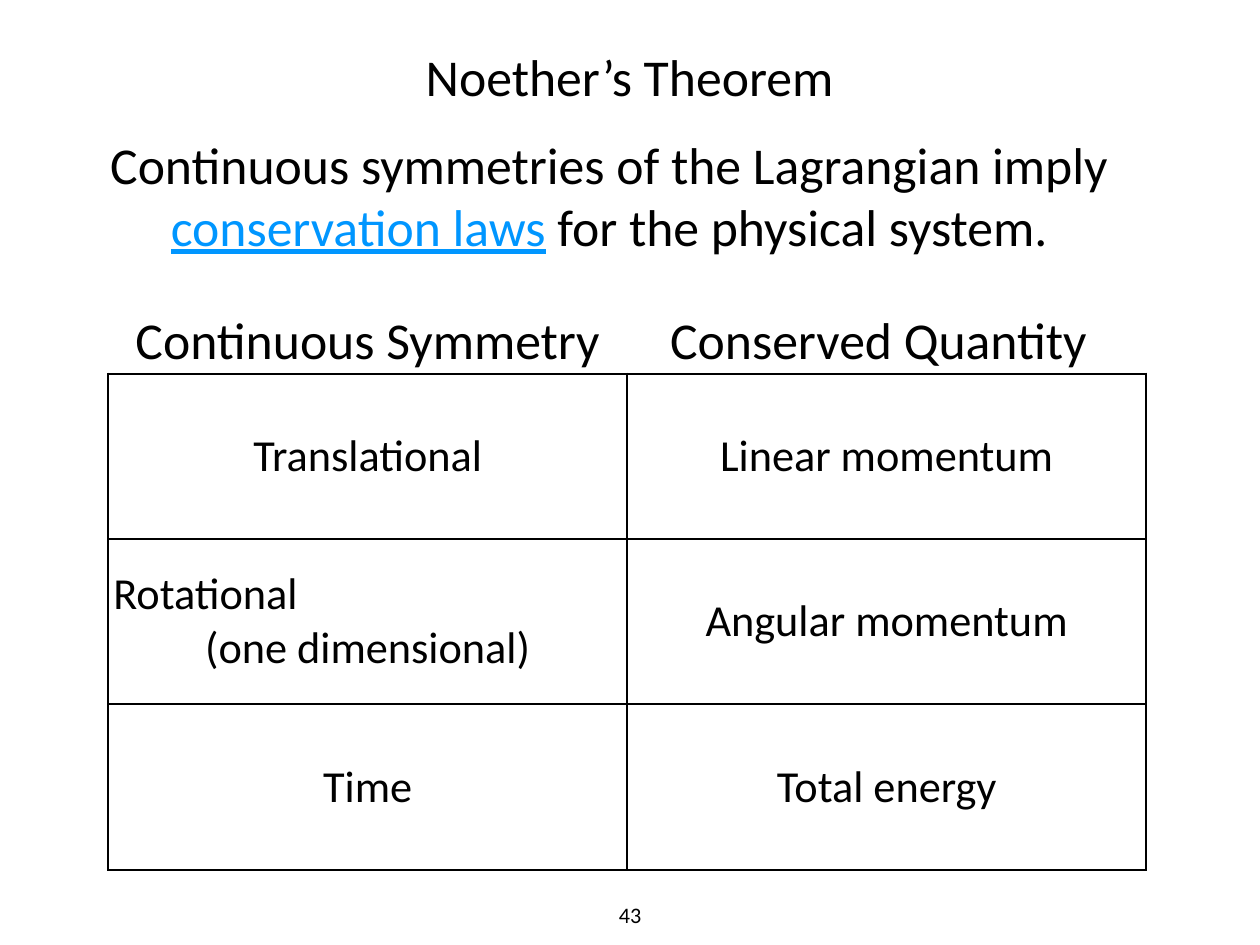
from lxml.etree import SubElement
from pptx import Presentation
from pptx.dml.color import RGBColor
from pptx.enum.text import MSO_ANCHOR, MSO_AUTO_SIZE, PP_ALIGN
from pptx.oxml import parse_xml
from pptx.oxml.ns import nsdecls, qn
from pptx.util import Cm, Pt

BLACK = RGBColor(0x00, 0x00, 0x00)
LINK_BLUE = RGBColor(0x00, 0x96, 0xFF)
FONT = "Calibri"
INSET = Cm(0.15)
HEADINGS = ("Continuous Symmetry", "Conserved Quantity ")
LAWS = (
    (("Translational",), ("Linear momentum",)),
    (("Rotational", "(one dimensional)"), ("Angular momentum",)),
    (("Time",), ("Total energy",)),
)


def add_run(paragraph, wording, size, color=BLACK, underline=None):
    """Append one formatted run to a paragraph."""
    run = paragraph.add_run()
    run.text = wording
    run.font.name = FONT
    run.font.size = Pt(size)
    run.font.color.rgb = color
    run.font.underline = underline


def add_label(slide, box, runs, size=42, wrap=True, anchor=MSO_ANCHOR.MIDDLE):
    """Place one centred paragraph of runs in the box."""
    frame = slide.shapes.add_textbox(*map(Cm, box)).text_frame
    frame.word_wrap = wrap
    frame.auto_size = MSO_AUTO_SIZE.SHAPE_TO_FIT_TEXT
    frame.vertical_anchor = anchor
    frame.margin_left = frame.margin_right = INSET
    frame.margin_top = frame.margin_bottom = INSET
    paragraph = frame.paragraphs[0]
    paragraph.alignment = PP_ALIGN.CENTER
    for wording, *style in runs:
        add_run(paragraph, wording, size, *style)


def add_borders(cell):
    """Draw a solid black line on all four sides of a cell."""
    properties = cell._tc.get_or_add_tcPr()
    for position, side in enumerate(("lnL", "lnR", "lnT", "lnB")):
        border = parse_xml(f'<a:{side} {nsdecls("a")} w="{Pt(2)}"/>')
        fill = SubElement(border, qn("a:solidFill"))
        SubElement(fill, qn("a:srgbClr"), val=str(BLACK))
        properties.insert(position, border)


def fill_cell(cell, lines):
    """Write the lines of a cell, centring the last one."""
    cell.fill.background()
    cell.vertical_anchor = MSO_ANCHOR.MIDDLE
    cell.margin_left = cell.margin_right = INSET
    cell.margin_top = cell.margin_bottom = INSET
    frame = cell.text_frame
    for number, line in enumerate(lines):
        paragraph = frame.add_paragraph() if number else frame.paragraphs[0]
        is_last = number == len(lines) - 1
        paragraph.alignment = PP_ALIGN.CENTER if is_last else PP_ALIGN.LEFT
        add_run(paragraph, line, 36)
    add_borders(cell)


def add_laws(slide, box):
    """Place the table of laws in the box, with its headings above."""
    left, top, width, height = box
    table = slide.shapes.add_table(len(LAWS), len(HEADINGS), *map(Cm, box)).table
    table.first_row = table.horz_banding = False
    for column in table.columns:
        column.width = Cm(width / len(HEADINGS))
    for row, law in zip(table.rows, LAWS):
        row.height = Cm(height / len(LAWS))
        for cell, lines in zip(row.cells, law):
            fill_cell(cell, lines)
    for number, heading in enumerate(HEADINGS):
        heading_left = left + 0.05 + number * 14.81
        add_label(slide, (heading_left, top - 2.02, 14.78, 2.01), [(heading,)])


def add_statement(slide, box):
    """Place the theorem's statement in the box."""
    add_label(slide, box, [
        ("Continuous symmetries of the Lagrangian imply ",),
        ("conservation laws", LINK_BLUE, True),
        (" for the physical system.",),
    ])


def main():
    """Build and save the slide."""
    deck = Presentation()
    deck.slide_width, deck.slide_height = Cm(36.12), Cm(27.1)
    slide = deck.slides.add_slide(deck.slide_layouts[6])
    add_label(slide, (11.99, 1.17, 12.12, 2.01), [("Noether’s Theorem",)], wrap=False)
    add_statement(slide, (2.54, 3.73, 29.85, 3.73))
    add_laws(slide, (3.1, 10.72, 29.76, 14.22))
    add_label(slide, (17.58, 25.7, 0.97, 1.02), [("43",)], 18, False, MSO_ANCHOR.TOP)
    deck.save("out.pptx")


if __name__ == "__main__":
    main()
